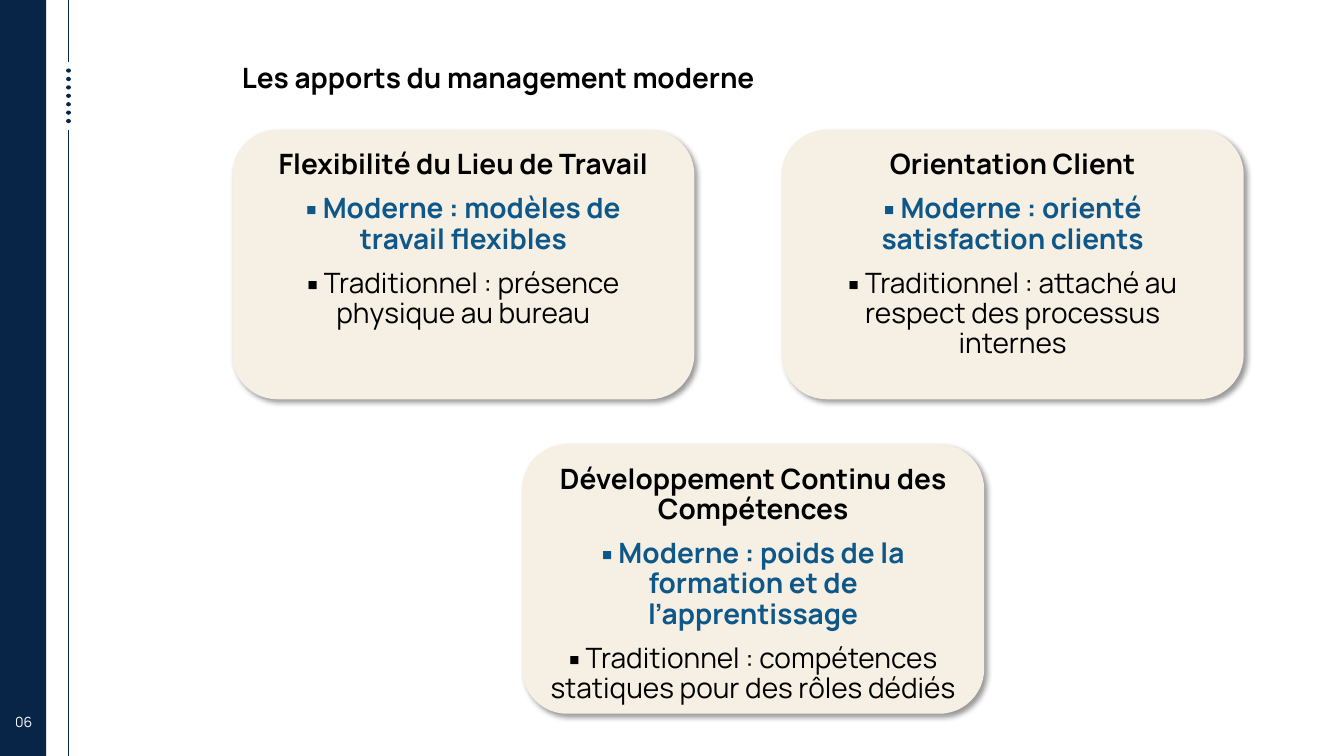
"""Build the slide on what modern management brings."""
from dataclasses import dataclass

from lxml import etree
from pptx import Presentation
from pptx.dml.color import RGBColor
from pptx.enum.dml import MSO_LINE
from pptx.enum.shapes import MSO_CONNECTOR, MSO_SHAPE
from pptx.enum.text import MSO_ANCHOR, MSO_AUTO_SIZE, PP_ALIGN
from pptx.oxml.ns import qn
from pptx.util import Pt

STRAIGHT = MSO_CONNECTOR.STRAIGHT
RECTANGLE = MSO_SHAPE.RECTANGLE
ROUNDED = MSO_SHAPE.ROUNDED_RECTANGLE
ROUND_DOT = MSO_LINE.ROUND_DOT
TOP = MSO_ANCHOR.TOP
NO_FIT = MSO_AUTO_SIZE.NONE
LEFT, CENTER = PP_ALIGN.LEFT, PP_ALIGN.CENTER

FONT = "Manrope"
NAVY, BLUE, CREAM = "082547", "0D5789", "F6EFE4"
BLACK, WHITE = "000000", "FFFFFF"
SLIDE_WIDTH, SLIDE_HEIGHT = 960, 540
CARD_WIDTH, CARD_HEIGHT = 330, 192.5
RULE_X = 49


@dataclass
class RulePart:
    top: float
    bottom: float
    weight: float
    dotted: bool = False


@dataclass
class Card:
    left: float
    top: float
    text_inset: float
    heading: str
    modern: str
    traditional: str


RULE_PARTS = [
    RulePart(0, 44, 0.5),
    RulePart(50.4, 88.6, 3, dotted=True),
    RulePart(93, SLIDE_HEIGHT, 0.5),
]

CARDS = [
    Card(166, 92.7, 21.6, "Flexibilité du Lieu de Travail",
         "modèles de travail flexibles", "présence physique au bureau"),
    Card(558.4, 92.7, 21.6, "Orientation Client",
         "orienté satisfaction clients",
         "attaché au respect des processus internes"),
    Card(373, 317.3, 10.8, "Développement Continu des Compétences",
         "poids de la formation et de l’apprentissage",
         "compétences statiques pour des rôles dédiés"),
]


def color(value: str) -> RGBColor:
    return RGBColor.from_string(value)


def place(shape, left: float, top: float, width: float, height: float) -> None:
    shape.left, shape.top = Pt(left), Pt(top)
    shape.width, shape.height = Pt(width), Pt(height)


def format_paragraph(paragraph, text: str, size: float, text_color: str,
                     bold: bool = False, alignment=CENTER) -> None:
    paragraph.text = text
    paragraph.alignment = alignment
    font = paragraph.font
    font.name, font.size, font.bold = FONT, Pt(size), bold
    font.color.rgb = color(text_color)


def add_filled_shape(slide, kind, left: float, top: float, width: float,
                     height: float, fill: str):
    shape = slide.shapes.add_shape(kind, Pt(left), Pt(top), Pt(width), Pt(height))
    shape.shadow.inherit = False
    shape.fill.solid()
    shape.fill.fore_color.rgb = color(fill)
    shape.line.fill.background()
    return shape


def add_card_shadow(shape) -> None:
    effects = shape._element.spPr.find(qn("a:effectLst"))
    shadow = etree.SubElement(
        effects, qn("a:outerShdw"), blurRad=str(Pt(4)), dist=str(Pt(3)),
        dir=str(45 * 60000), algn="tl", rotWithShape="0")
    shadow_color = etree.SubElement(shadow, qn("a:srgbClr"), val=BLACK)
    etree.SubElement(shadow_color, qn("a:alpha"), val="40000")


def add_rule_part(slide, part: RulePart) -> None:
    connector = slide.shapes.add_connector(
        STRAIGHT, Pt(RULE_X), Pt(part.top), Pt(RULE_X), Pt(part.bottom))
    connector.line.color.rgb = color(NAVY)
    connector.line.width = Pt(part.weight)
    if part.dotted:
        connector.line.dash_style = ROUND_DOT
        connector.line._ln.set("cap", "rnd")
    etree.SubElement(connector._element.spPr, qn("a:effectLst"))


def add_page_number(slide, number: str) -> None:
    box = slide.shapes.add_textbox(Pt(5), Pt(509.8), Pt(23.8), Pt(12.2))
    frame = box.text_frame
    frame.word_wrap = True
    frame.margin_left = frame.margin_right = 0
    frame.margin_top = frame.margin_bottom = 0
    format_paragraph(frame.paragraphs[0], number, 10, WHITE)


def set_title(slide, text: str) -> None:
    title = slide.shapes.title
    place(title, 165.6, 39.6, 669, 31.7)
    frame = title.text_frame
    frame.vertical_anchor = TOP
    frame.auto_size = NO_FIT
    format_paragraph(frame.paragraphs[0], text, 20, BLACK, True, LEFT)


def add_card(slide, card: Card) -> None:
    panel = add_filled_shape(slide, ROUNDED, card.left, card.top,
                             CARD_WIDTH, CARD_HEIGHT, CREAM)
    add_card_shadow(panel)
    box = slide.shapes.add_textbox(
        Pt(card.left + card.text_inset), Pt(card.top + 11.3),
        Pt(CARD_WIDTH - 2 * card.text_inset), Pt(72))
    frame = box.text_frame
    frame.word_wrap = True
    lines = [
        (card.heading, BLACK, True),
        (f"▪ Moderne : {card.modern}", BLUE, True),
        (f"▪ Traditionnel : {card.traditional}", BLACK, False),
    ]
    for index, (text, text_color, bold) in enumerate(lines):
        paragraph = frame.add_paragraph() if index else frame.paragraphs[0]
        format_paragraph(paragraph, text, 20, text_color, bold)
        paragraph.line_spacing = 0.9
        paragraph.space_before = Pt(10)


def main() -> None:
    presentation = Presentation()
    presentation.slide_width = Pt(SLIDE_WIDTH)
    presentation.slide_height = Pt(SLIDE_HEIGHT)
    slide = presentation.slides.add_slide(presentation.slide_layouts[5])
    for part in RULE_PARTS:
        add_rule_part(slide, part)
    add_filled_shape(slide, RECTANGLE, 0, 0, 33, SLIDE_HEIGHT, NAVY)
    add_page_number(slide, "06")
    set_title(slide, "Les apports du management moderne")
    for card in CARDS:
        add_card(slide, card)
    presentation.save("out.pptx")


if __name__ == "__main__":
    main()
